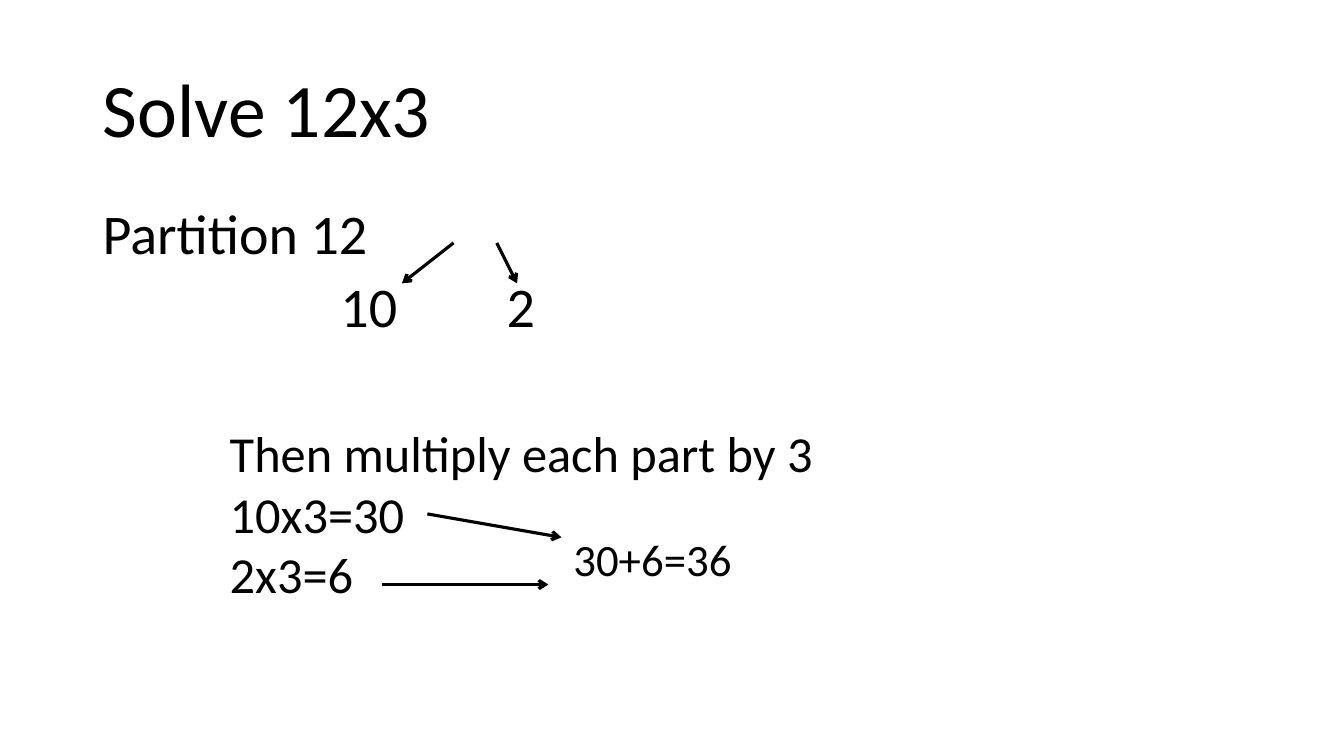
import pptx
import pptx.util
import pptx.dml.color
import pptx.enum.shapes
import pptx.enum.text
import pptx.oxml.ns
import lxml.etree
from pptx.util import Cm

COLOURS = {"ink": "000000", "paper": "FFFFFF"}
FONT = "Calibri"


def colour(name):
    return pptx.dml.color.RGBColor.from_string(COLOURS[name])


def write_lines(shape, lines, size, spacing=1.0, anchor="TOP"):
    frame = shape.text_frame
    frame_format = {
        "text": "\n".join(lines),
        "word_wrap": True,
        "auto_size": pptx.enum.text.MSO_AUTO_SIZE.NONE,
        "vertical_anchor": getattr(pptx.enum.text.MSO_ANCHOR, anchor),
    }
    for name, value in frame_format.items():
        setattr(frame, name, value)
    font_format = {"name": FONT, "size": pptx.util.Pt(size), "bold": False}
    for paragraph in frame.paragraphs:
        paragraph.alignment = pptx.enum.text.PP_ALIGN.LEFT
        paragraph.line_spacing = spacing
        for run in paragraph.runs:
            for name, value in font_format.items():
                setattr(run.font, name, value)
            run.font.color.rgb = colour("ink")


def add_text(slide, box, lines, size, spacing=1.0):
    shape = slide.shapes.add_textbox(*map(Cm, box))
    write_lines(shape, lines, size, spacing)


def add_arrow(slide, origin, start, end):
    left, top = origin
    points = (left + start[0], top + start[1], left + end[0], top + end[1])
    arrow = slide.shapes.add_connector(
        pptx.enum.shapes.MSO_CONNECTOR.STRAIGHT, *map(Cm, points)
    )
    arrow.line.color.rgb = colour("ink")
    arrow.line.width = pptx.util.Pt(2.25)
    qualify = pptx.oxml.ns.qn
    lxml.etree.SubElement(arrow.line._get_or_add_ln(), qualify("a:tailEnd"), type="arrow")
    lxml.etree.SubElement(arrow._element.spPr, qualify("a:effectLst"))


def add_title(slide, box):
    title = slide.shapes.title
    for name, length in zip(("left", "top", "width", "height"), box):
        setattr(title, name, Cm(length))
    write_lines(title, ["Solve 12x3"], 54, 0.9, "MIDDLE")


def add_partition(slide, box):
    left, top, width, height = box
    add_text(slide, box, ["Partition 12"], 40, 0.9)
    parts = [
        ("10", 5.99, 2.57, (9.09, 1.04), (7.79, 2.06)),
        ("2", 10.18, 1.6, (10.18, 1.04), (10.69, 2.06)),
    ]
    for part, offset, part_width, start, end in parts:
        add_text(slide, (left + offset, top + 1.65, part_width, 1.96), [part], 40)
        add_arrow(slide, (left, top), start, end)


def add_multiplication(slide, box):
    left, top, width, height = box
    add_text(slide, box, ["Then multiply each part by 3", "10x3=30", "2x3=6"], 36)
    for start, end in [((5.23, 2.43), (8.61, 3.02)), ((4.09, 4.21), (8.28, 4.21))]:
        add_arrow(slide, (left, top), start, end)
    add_text(slide, (left + 8.66, top + 2.76, 9.6, 1.63), ["30+6=36"], 32)


def main():
    presentation = pptx.Presentation()
    presentation.slide_width = Cm(33.87)
    presentation.slide_height = Cm(19.05)
    slide = presentation.slides.add_slide(presentation.slide_layouts[5])
    slide.background.fill.solid()
    slide.background.fill.fore_color.rgb = colour("paper")
    add_title(slide, (2.34, 1.02, 29.21, 3.68))
    add_partition(slide, (2.34, 5.08, 29.21, 12.09))
    add_multiplication(slide, (5.54, 10.52, 16.21, 4.88))
    presentation.save("out.pptx")


if __name__ == "__main__":
    main()
